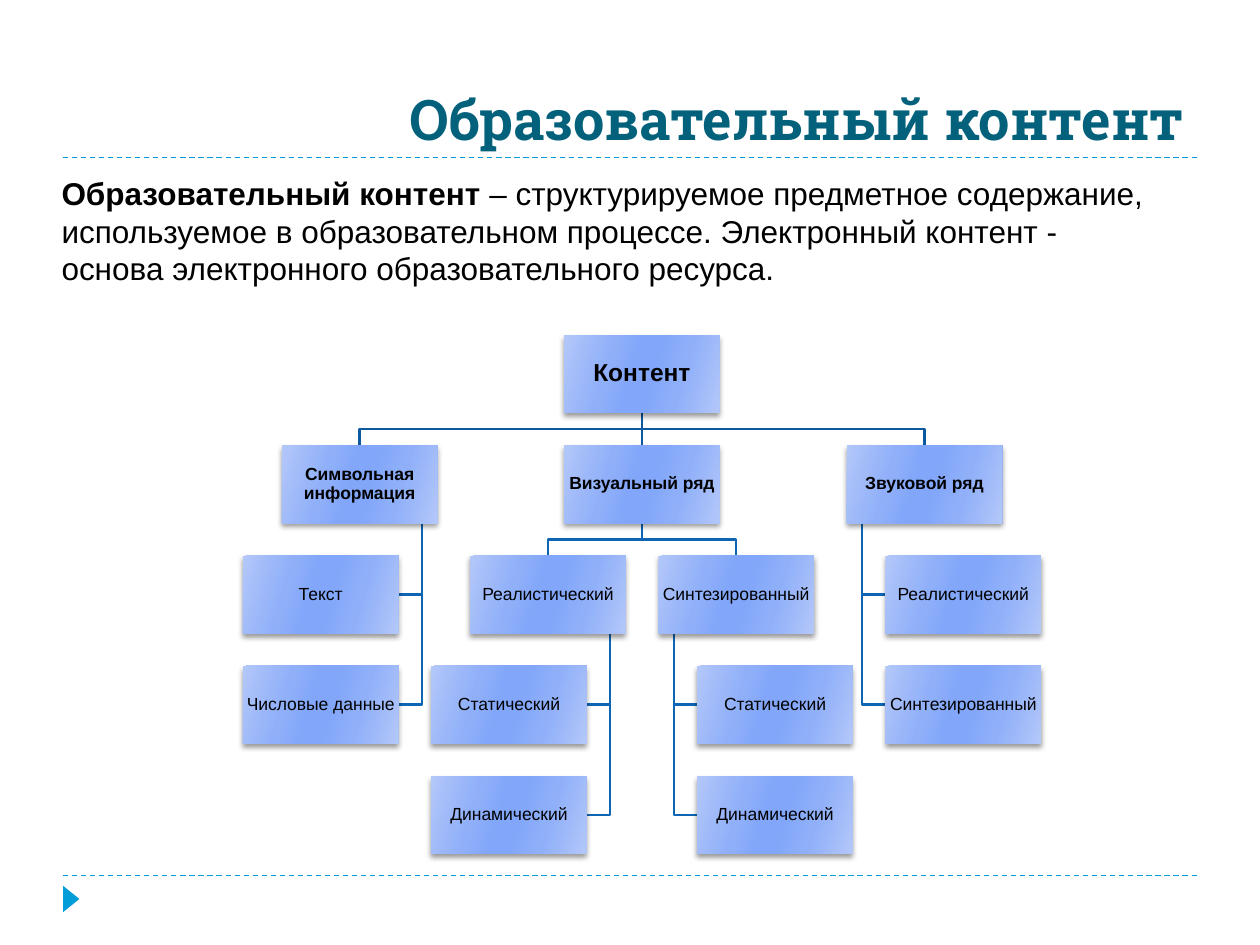
from dataclasses import dataclass, field

from lxml.etree import SubElement
from pptx import Presentation
from pptx.dml.color import RGBColor
from pptx.enum.dml import MSO_LINE
from pptx.enum.shapes import MSO_CONNECTOR, MSO_SHAPE
from pptx.enum.text import MSO_ANCHOR, PP_ALIGN
from pptx.oxml import parse_xml
from pptx.oxml.ns import nsdecls, qn
from pptx.util import Inches, Pt


@dataclass(frozen=True)
class Theme:
    heading_font: str = "Roboto Slab"
    body_font: str = "Arial"
    heading: str = "04617B"
    accent: str = "009DD9"
    text: str = "000000"
    root_branch: str = "0C599F"
    lower_branch: str = "0E65B4"
    box_gradient: tuple = ((0, "B3C7F9"), (30, "8FAFF9"), (45, "82A6F9"),
                           (55, "82A6F9"), (73, "8FAFF9"), (100, "B3C7F9"))
    gradient_angle: int = 16
    title_size: int = 32
    body_size: int = 18
    root_size: int = 14
    box_size: int = 10
    rule_width: float = 0.75
    branch_width: float = 1.5


@dataclass
class Node:
    label: str
    center: float
    level: int
    bold: bool = False
    hang: int = 0
    children: list = field(default_factory=list)


class TreeGrid:
    MIDDLE, HALF_PITCH = 50.95, 7.47
    TOP, ROW = 26.6, 8.75
    WIDTH, HEIGHT = 12.35, 6.17

    @classmethod
    def column(cls, step):
        return cls.MIDDLE + step * cls.HALF_PITCH

    @classmethod
    def top(cls, node):
        return cls.TOP + node.level * cls.ROW

    @classmethod
    def bottom(cls, node):
        return cls.top(node) + cls.HEIGHT

    @classmethod
    def hanging(cls, label, step, level, side, leaves, bold=False):
        center = cls.column(step)
        children = [Node(leaf, center + side * cls.WIDTH / 4, level + row)
                    for row, leaf in enumerate(leaves, 1)]
        return Node(label, center, level, bold, side, children)

    @classmethod
    def branch(cls, parent, child):
        if parent.hang:
            spine = parent.center - parent.hang * 0.4 * cls.WIDTH
            middle = cls.top(child) + cls.HEIGHT / 2
            edge = child.center - parent.hang * cls.WIDTH / 2
            return [(spine, cls.bottom(parent)), (spine, middle), (edge, middle)]
        turn = (cls.bottom(parent) + cls.top(child)) / 2
        return [(parent.center, cls.bottom(parent)), (parent.center, turn),
                (child.center, turn), (child.center, cls.top(child))]


class SlideBuilder:
    COLUMNS, ROWS = 100, 75

    def __init__(self, deck, theme):
        self.theme = theme
        self.column = deck.slide_width / self.COLUMNS
        self.row = deck.slide_height / self.ROWS
        self.shapes = deck.slides.add_slide(deck.slide_layouts[6]).shapes

    def point(self, x, y):
        return round(x * self.column), round(y * self.row)

    def style(self, run, size, color, font, bold):
        run.font.size = Pt(size)
        run.font.name = font
        run.font.bold = bold
        run.font.color.rgb = RGBColor.from_string(color)

    def stroke(self, shape, color, width):
        shape.line.color.rgb = RGBColor.from_string(color)
        shape.line.width = Pt(width)

    def line(self, start, end, color, width):
        connector = self.shapes.add_connector(
            MSO_CONNECTOR.STRAIGHT, *self.point(*start), *self.point(*end))
        self.stroke(connector, color, width)
        SubElement(connector.element.spPr, qn("a:effectLst"))
        return connector

    def rule(self, y):
        rule = self.line((5, y), (95, y), self.theme.accent, self.theme.rule_width)
        rule.line.dash_style = MSO_LINE.DASH

    def marker(self, x, y, width, height):
        marker = self.shapes.add_shape(
            MSO_SHAPE.ISOSCELES_TRIANGLE, *self.point(x, y), *self.point(width, height))
        marker.rotation = 90
        marker.shadow.inherit = False
        marker.fill.solid()
        marker.fill.fore_color.rgb = RGBColor.from_string(self.theme.accent)
        marker.line.fill.background()

    def text(self, x, y, width, height, parts, size, color, font,
             align=PP_ALIGN.LEFT, anchor=MSO_ANCHOR.TOP, right_inset=0.1):
        frame = self.shapes.add_textbox(
            *self.point(x, y), *self.point(width, height)).text_frame
        frame.word_wrap = True
        frame.vertical_anchor = anchor
        frame.margin_right = Inches(right_inset)
        paragraph = frame.paragraphs[0]
        paragraph.alignment = align
        for words, bold in parts:
            run = paragraph.add_run()
            run.text = words
            self.style(run, size, color, font, bold)

    def elbow(self, points, color):
        start, *turns = [self.point(*point) for point in points]
        builder = self.shapes.build_freeform(*start)
        builder.add_line_segments(turns, close=False)
        elbow = builder.convert_to_shape()
        elbow.fill.background()
        elbow.shadow.inherit = False
        self.stroke(elbow, color, self.theme.branch_width)

    def box(self, node, size):
        box = self.shapes.add_shape(
            MSO_SHAPE.RECTANGLE,
            *self.point(node.center - TreeGrid.WIDTH / 2, TreeGrid.top(node)),
            *self.point(TreeGrid.WIDTH, TreeGrid.HEIGHT))
        box.line.fill.background()
        self.shade(box)
        frame = box.text_frame
        frame.text = node.label
        frame.word_wrap = True
        frame.vertical_anchor = MSO_ANCHOR.MIDDLE
        frame.margin_left = frame.margin_right = Inches(0.01)
        frame.margin_top = frame.margin_bottom = Inches(0.01)
        paragraph = frame.paragraphs[0]
        paragraph.alignment = PP_ALIGN.CENTER
        paragraph.line_spacing = 0.9
        self.style(paragraph.runs[0], size, self.theme.text, self.theme.body_font, node.bold)
        return box

    def shade(self, box):
        stops = "".join(f'<a:gs pos="{share * 1000}"><a:srgbClr val="{color}"/></a:gs>'
                        for share, color in self.theme.box_gradient)
        properties = box.element.spPr
        properties.find(qn("a:ln")).addprevious(parse_xml(
            f'<a:gradFill {nsdecls("a")} rotWithShape="1"><a:gsLst>{stops}</a:gsLst>'
            f'<a:lin ang="{self.theme.gradient_angle * 60000}" scaled="0"/></a:gradFill>'))
        properties.append(parse_xml(
            f'<a:effectLst {nsdecls("a")}><a:outerShdw blurRad="{Pt(3)}" dist="{Pt(2)}" '
            'dir="5400000" rotWithShape="0"><a:srgbClr val="000000">'
            '<a:alpha val="40000"/></a:srgbClr></a:outerShdw></a:effectLst>'))

    def tree(self, root):
        theme = self.theme
        nodes = [root]
        for parent in nodes:
            nodes.extend(parent.children)
        straight = []
        for parent in nodes:
            color = theme.root_branch if parent is root else theme.lower_branch
            for child in parent.children:
                if child.center == parent.center:
                    start = parent.center, TreeGrid.bottom(parent)
                    end = child.center, TreeGrid.top(child)
                    link = self.line(start, end, color, theme.branch_width)
                    straight.append((link, parent, child))
                else:
                    self.elbow(TreeGrid.branch(parent, child), color)
        boxes = {id(node): self.box(node, theme.root_size if node is root else theme.box_size)
                 for node in nodes}
        for link, parent, child in straight:
            link.begin_connect(boxes[id(parent)], 2)
            link.end_connect(boxes[id(child)], 0)


def main():
    deck = Presentation()
    deck.slide_width, deck.slide_height = Inches(10), Inches(7.5)
    theme = Theme()
    slide = SlideBuilder(deck, theme)

    slide.rule(69.5)
    slide.rule(12.5)
    slide.marker(4.6, 70.7, 2.1, 1.3)
    slide.text(5, 1.7, 90, 10.8, [("Образовательный контент", True)], theme.title_size,
               theme.heading, theme.heading_font, PP_ALIGN.RIGHT, MSO_ANCHOR.BOTTOM)

    motion = ["Статический", "Динамический"]
    origin = ["Реалистический", "Синтезированный"]
    visual = Node("Визуальный ряд", TreeGrid.column(0), 1, True, children=[
        TreeGrid.hanging(label, side, 2, side, motion)
        for label, side in zip(origin, (-1, 1))])
    symbolic = TreeGrid.hanging("Символьная информация", -3, 1, -1,
                                ["Текст", "Числовые данные"], True)
    sound = TreeGrid.hanging("Звуковой ряд", 3, 1, 1, origin, True)
    slide.tree(Node("Контент", TreeGrid.column(0), 0, True,
                    children=[symbolic, visual, sound]))

    definition = (" – структурируемое предметное содержание, используемое в образовательном "
                  "процессе. Электронный контент - основа электронного образовательного ресурса.")
    slide.text(3.9, 13.3, 90.3, 16.2,
               [("Образовательный контент", True), (definition, False)],
               theme.body_size, theme.text, theme.body_font, right_inset=0.22)
    deck.save("out.pptx")


if __name__ == "__main__":
    main()
